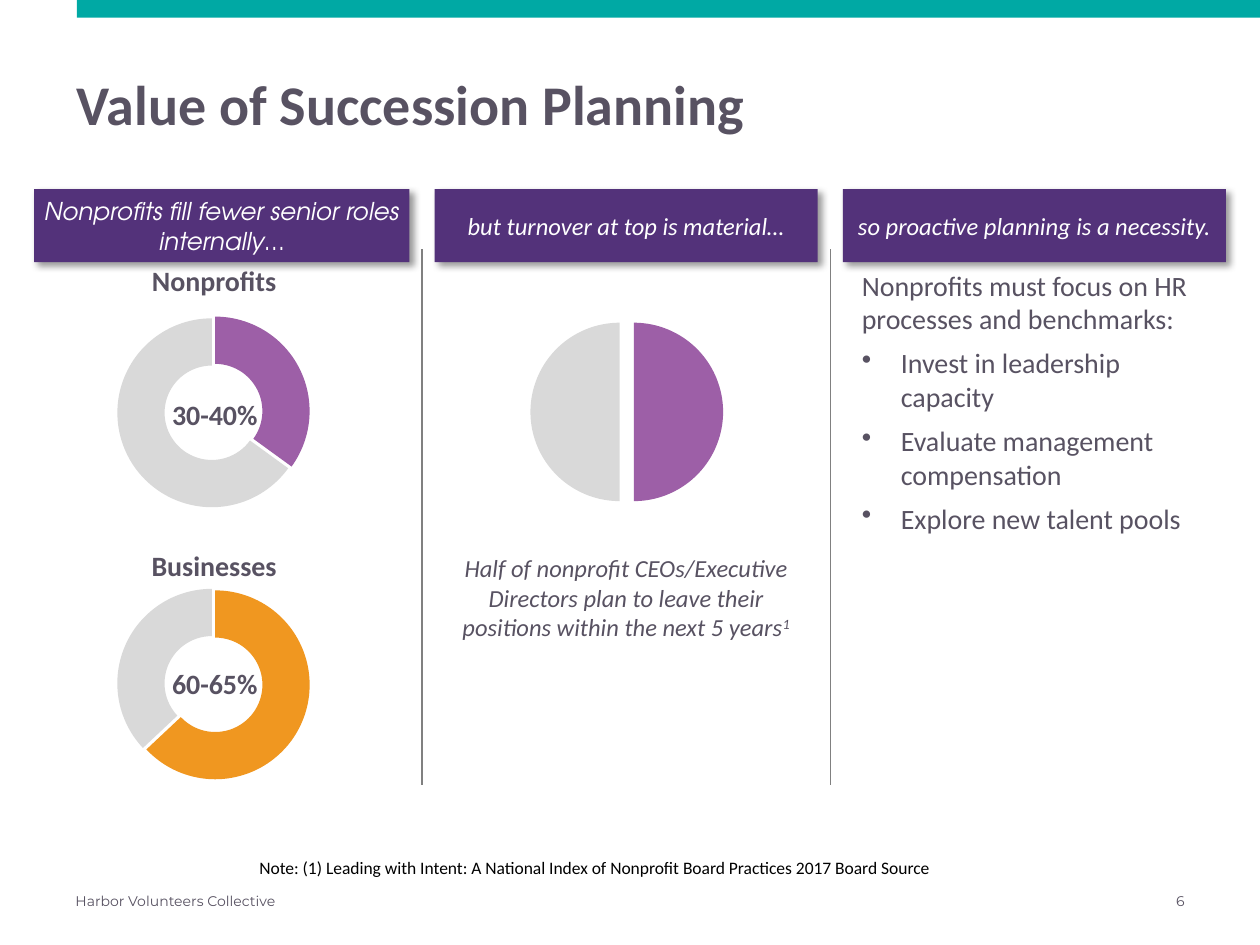
import pptx
import pptx.chart.data
import pptx.dml.color
import pptx.enum.chart
import pptx.enum.shapes
import pptx.enum.text
import pptx.oxml
import pptx.oxml.ns
import pptx.util
from lxml import etree

Inches = pptx.util.Inches
Pt = pptx.util.Pt
ALIGN = pptx.enum.text.PP_ALIGN
ANCHOR = pptx.enum.text.MSO_ANCHOR
CHART = pptx.enum.chart.XL_CHART_TYPE

COLORS = {
    "teal": "00A9A4", "header": "53327A", "purple": "9D5FA7",
    "orange": "F09720", "rest": "D9D9D9", "text": "585262",
    "divider": "808080", "white": "FFFFFF", "black": "000000",
}
BODY, DISPLAY, FOOTER = "Calibri", "TeX Gyre Adventor", "Montserrat"
HEADER_TOP, HEADER_HEIGHT = 1.5, 0.58
COLUMNS = [  # left, width, header, header font
    (0.27, 2.98, "Nonprofits fill fewer senior roles internally…", DISPLAY),
    (3.45, 3.04, "but turnover at top is material…", BODY),
    (6.69, 3.04, "so proactive planning is a necessity.", BODY),
]
DIVIDER_OFFSET = 0.1
CHART_WIDTH, CHART_HEIGHT, PIE_SHARE = 2.43, 1.8, 0.85


def rgb(name):
    return pptx.dml.color.RGBColor.from_string(COLORS[name])


class SlideBuilder:
    def __init__(self, slide):
        self.slide = slide

    def format_runs(self, paragraph, size, color="text", font=BODY, bold=False, italic=False):
        for run in paragraph.runs:
            run.font.size = Pt(size)
            run.font.name = font
            run.font.bold = bold
            run.font.italic = italic
            run.font.color.rgb = rgb(color)

    def title(self, text, left, top, width, height):
        title = self.slide.shapes.title
        title.left, title.top = Inches(left), Inches(top)
        title.width, title.height = Inches(width), Inches(height)
        frame = title.text_frame
        frame.text = text
        frame.auto_size = pptx.enum.text.MSO_AUTO_SIZE.NONE
        frame.vertical_anchor = ANCHOR.TOP
        frame.paragraphs[0].alignment = ALIGN.LEFT
        self.format_runs(frame.paragraphs[0], 32, bold=True)

    def text(self, text, left, top, width, height, size, align=ALIGN.CENTER,
             anchor=ANCHOR.MIDDLE, **style):
        box = self.slide.shapes.add_textbox(
            Inches(left), Inches(top), Inches(width), Inches(height))
        frame = box.text_frame
        frame.word_wrap = True
        frame.vertical_anchor = anchor
        frame.text = text
        for paragraph in frame.paragraphs:
            paragraph.alignment = align
            self.format_runs(paragraph, size, **style)
        return frame

    def bullets(self, paragraphs, indent):
        for paragraph in paragraphs:
            properties = paragraph._p.get_or_add_pPr()
            properties.set("marL", str(Inches(indent)))
            properties.set("indent", str(-Inches(indent)))
            bullet = etree.SubElement(properties, pptx.oxml.ns.qn("a:buChar"))
            bullet.set("char", "•")

    def rectangle(self, left, top, width, height, color):
        shape = self.slide.shapes.add_shape(
            pptx.enum.shapes.MSO_SHAPE.RECTANGLE,
            Inches(left), Inches(top), Inches(width), Inches(height))
        shape.shadow.inherit = False
        shape.fill.solid()
        shape.fill.fore_color.rgb = rgb(color)
        shape.line.fill.background()
        return shape

    def header(self, text, left, width, font):
        shape = self.rectangle(left, HEADER_TOP, width, HEADER_HEIGHT, "header")
        effects = shape._element.spPr.find(pptx.oxml.ns.qn("a:effectLst"))
        effects.append(pptx.oxml.parse_xml(
            f'<a:outerShdw {pptx.oxml.ns.nsdecls("a")} blurRad="{Pt(4)}" dist="{Pt(3)}" '
            f'dir="2700000" algn="tl" rotWithShape="0"><a:srgbClr val="{COLORS["black"]}">'
            '<a:alpha val="40000"/></a:srgbClr></a:outerShdw>'))
        frame = shape.text_frame
        frame.margin_left = frame.margin_right = 0
        frame.word_wrap = True
        frame.vertical_anchor = ANCHOR.MIDDLE
        frame.text = text
        frame.paragraphs[0].alignment = ALIGN.CENTER
        self.format_runs(frame.paragraphs[0], 14, color="white", font=font, italic=True)

    def divider(self, x, top, bottom):
        line = self.slide.shapes.add_connector(
            pptx.enum.shapes.MSO_CONNECTOR.STRAIGHT,
            Inches(x), Inches(top), Inches(x), Inches(bottom))
        line.line.color.rgb = rgb("divider")
        line.line.width = Pt(0.75)
        etree.SubElement(line._element.spPr, pptx.oxml.ns.qn("a:effectLst"))

    def share_chart(self, kind, left, top, share, color, explosion):
        """Show one share of 100 against a grey remainder."""
        data = pptx.chart.data.CategoryChartData()
        data.categories = ["1", "2"]
        data.add_series("Series 1", (share, 100 - share))
        chart = self.slide.shapes.add_chart(
            kind, Inches(left), Inches(top),
            Inches(CHART_WIDTH), Inches(CHART_HEIGHT), data).chart
        chart.has_legend = False
        chart.has_title = False
        chart.font.size = Pt(10)
        chart.font.name = DISPLAY
        chart.font.color.rgb = rgb("black")
        plot = chart.plots[0]
        plot.vary_by_categories = True
        series = plot.series[0]
        for index, name in enumerate((color, "rest")):
            fill = series.points[index].format.fill
            fill.solid()
            fill.fore_color.rgb = rgb(name)
        namespace = pptx.oxml.ns.nsdecls("c")
        series._element.find(pptx.oxml.ns.qn("c:dPt")).addprevious(
            pptx.oxml.parse_xml(f'<c:explosion {namespace} val="{explosion}"/>'))
        for hole in chart._chartSpace.iter(pptx.oxml.ns.qn("c:holeSize")):
            hole.set("val", "64")
        self.center_plot(chart, namespace)

    def center_plot(self, chart, namespace):
        width = PIE_SHARE * CHART_HEIGHT / CHART_WIDTH
        sizes = {"x": (1 - width) / 2, "y": (1 - PIE_SHARE) / 2, "w": width, "h": PIE_SHARE}
        values = "".join(f'<c:{key} val="{value:.3f}"/>' for key, value in sizes.items())
        area = chart._chartSpace.chart.plotArea
        for layout in area.findall(pptx.oxml.ns.qn("c:layout")):
            area.remove(layout)
        area.insert(0, pptx.oxml.parse_xml(
            f'<c:layout {namespace}><c:manualLayout><c:layoutTarget val="inner"/>'
            f'<c:xMode val="edge"/><c:yMode val="edge"/>{values}</c:manualLayout></c:layout>'))


def main():
    deck = pptx.Presentation()
    deck.slide_width, deck.slide_height = Inches(10), Inches(7.5)
    builder = SlideBuilder(deck.slides.add_slide(deck.slide_layouts[5]))

    builder.rectangle(0.61, 0, 9.39, 0.14, "teal")
    builder.title("Value of Succession Planning", 0.51, 0.5, 9, 0.49)
    for left, width, header, font in COLUMNS:
        builder.header(header, left, width, font)
    for left, *_ in COLUMNS[1:]:
        builder.divider(left - DIVIDER_OFFSET, 1.98, 6.23)

    fill_rates = [  # label, label top, chart top, range, range top, share, color
        ("Nonprofits", 1.98, 2.37, "30-40%", 3.04, 35, "purple"),
        ("Businesses", 4.24, 4.53, "60-65%", 5.18, 63, "orange"),
    ]
    for label, label_top, chart_top, rate, rate_top, share, color in fill_rates:
        builder.share_chart(CHART.DOUGHNUT, 0.48, chart_top, share, color, 4)
        builder.text(label, 0.85, label_top, 1.7, 0.49, 16, bold=True)
        builder.text(rate, 1.14, rate_top, 1.13, 0.49, 16, bold=True)

    builder.share_chart(CHART.PIE, 3.76, 2.37, 50, "purple", 8)
    turnover = builder.text(
        "Half of nonprofit CEOs/Executive Directors plan to leave their positions "
        "within the next 5 years", 3.45, 4.15, 3.04, 1.18, 14, italic=True).paragraphs[0]
    footnote_mark = turnover.add_run()
    footnote_mark.text = "1"
    builder.format_runs(turnover, 14, italic=True)
    footnote_mark.font._element.set("baseline", "30000")

    actions = builder.text(
        "Nonprofits must focus on HR processes and benchmarks:\n"
        "Invest in leadership capacity\n"
        "Evaluate management compensation\n"
        "Explore new talent pools",
        6.69, 2.08, 3.04, 4.25, 16, align=ALIGN.LEFT, anchor=ANCHOR.TOP)
    actions.margin_left = Inches(0.15)
    for paragraph in actions.paragraphs:
        paragraph.space_after = Pt(6)
    builder.bullets(actions.paragraphs[1:], 0.31)

    builder.text("Note: (1) Leading with Intent: A National Index of Nonprofit Board "
                 "Practices 2017 Board Source", 1.96, 6.75, 5.61, 0.27, 10,
                 align=ALIGN.LEFT, anchor=ANCHOR.TOP, color="black")
    builder.text("Harbor Volunteers Collective", 0.5, 6.95, 6.08, 0.4, 8,
                 align=ALIGN.LEFT, font=FOOTER)
    builder.text("6", 7.17, 6.95, 2.33, 0.4, 8, align=ALIGN.RIGHT, font=FOOTER)
    deck.save("out.pptx")


if __name__ == "__main__":
    main()
